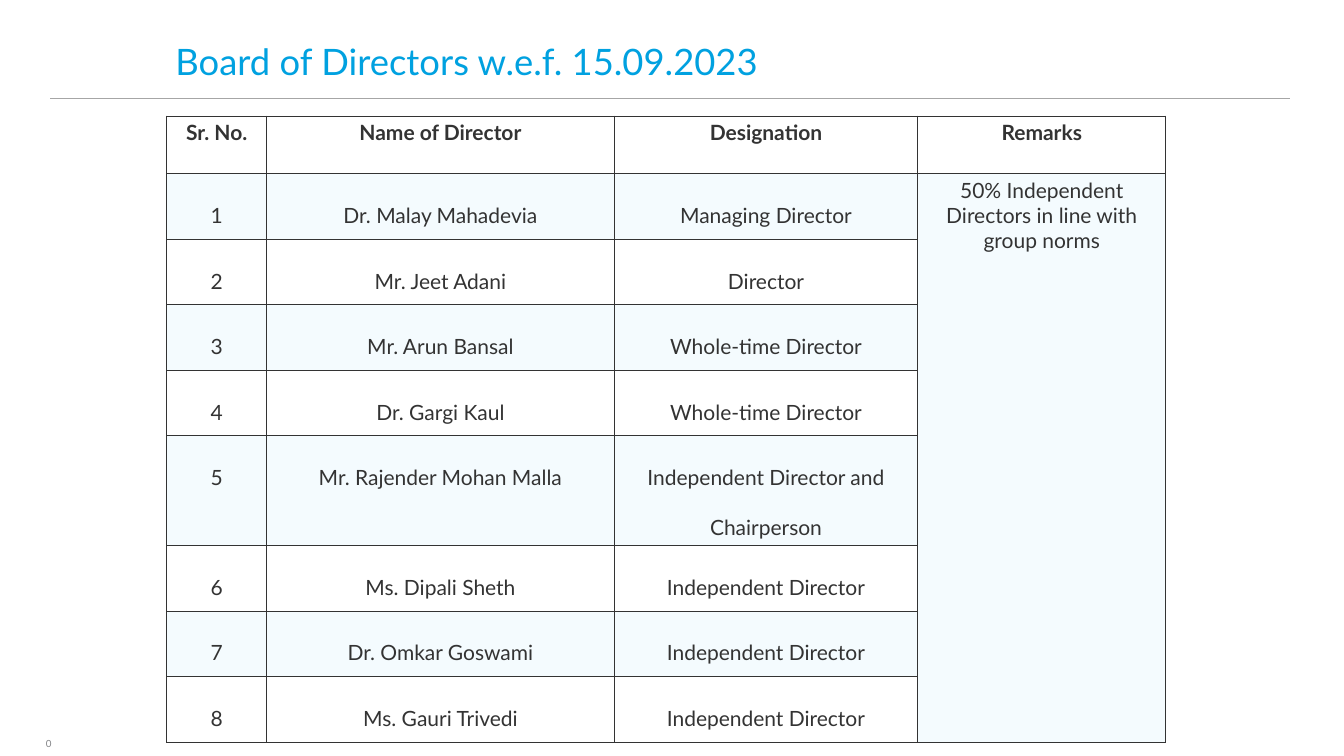
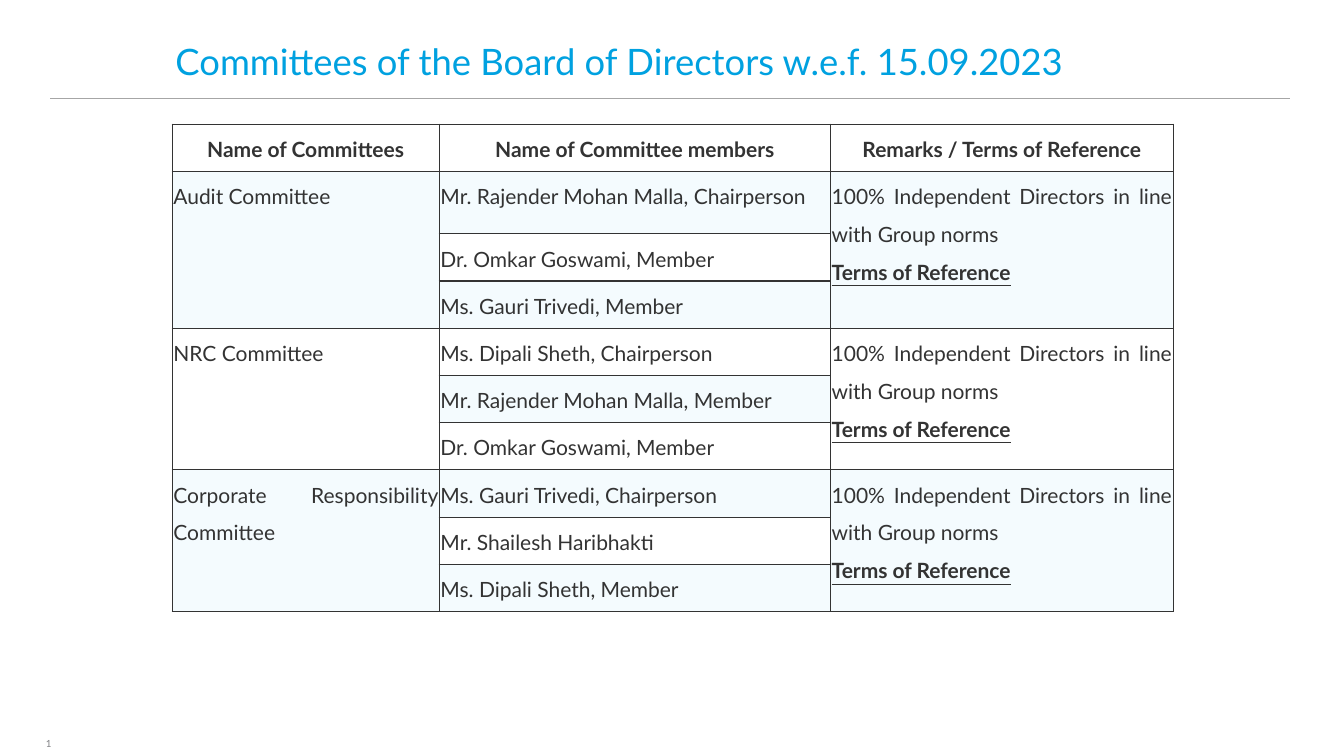
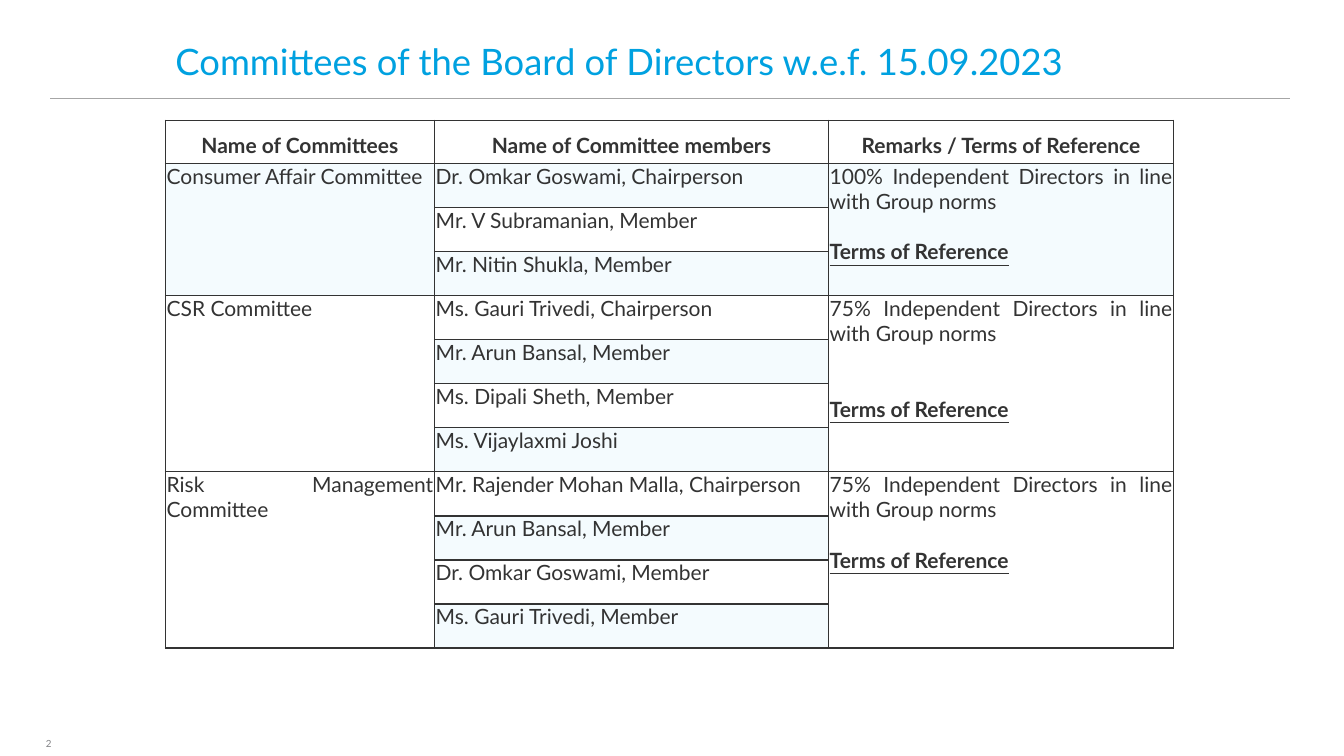
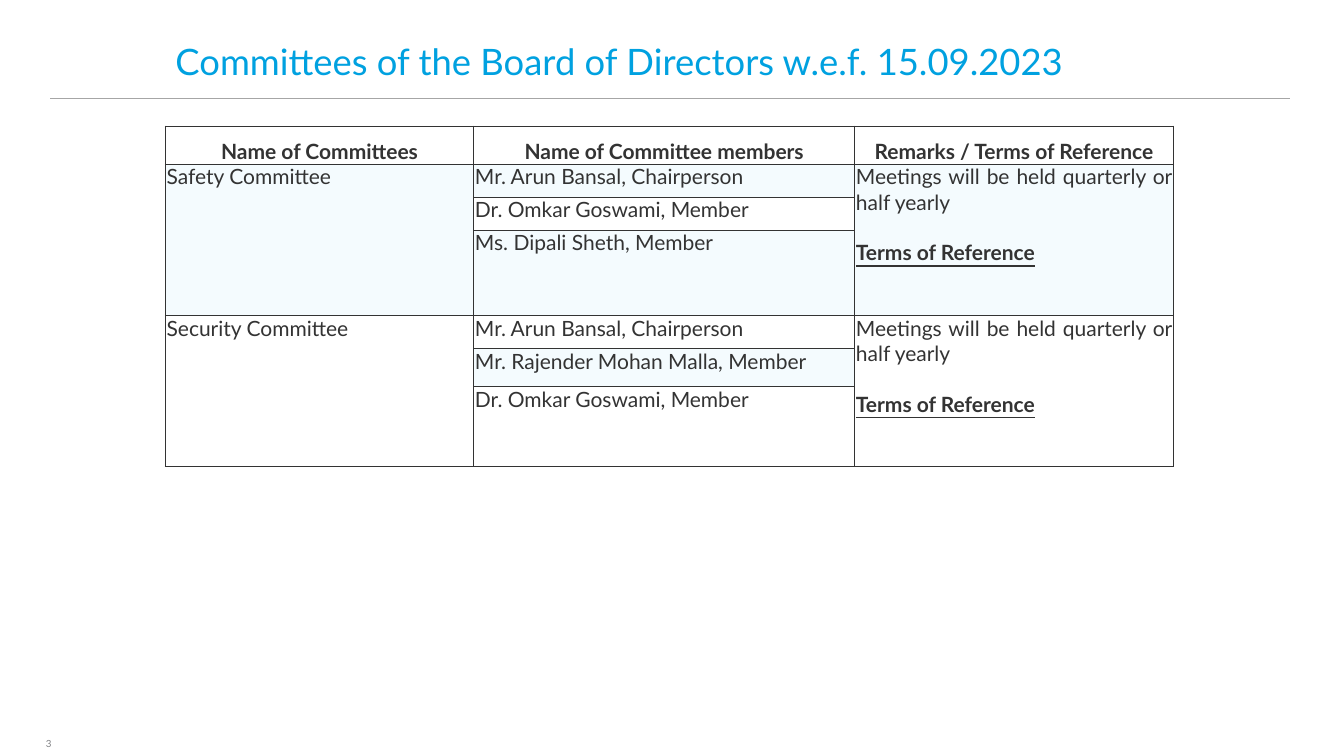
import pptx
import pptx.util
import pptx.dml.color
import pptx.enum.shapes
import pptx.enum.text
import pptx.oxml
import pptx.oxml.ns
from lxml import etree

Cm, Pt = pptx.util.Cm, pptx.util.Pt
RGBColor = pptx.dml.color.RGBColor
ALIGN = pptx.enum.text.PP_ALIGN
qn = pptx.oxml.ns.qn

# Shared look
FONT = "Lato"
TITLE_BLUE = RGBColor(0x00, 0xA1, 0xE0)
INK = RGBColor(0x33, 0x33, 0x33)
RULE_GREY = RGBColor(0xA6, 0xA6, 0xA6)
NUMBER_GREY = RGBColor(0x82, 0x83, 0x86)
WHITE = RGBColor(0xFF, 0xFF, 0xFF)
TINT = RGBColor(0xF4, 0xFB, 0xFE)
BODY_SIZE = 15
TEXT_LINE = 18  # height in points of one line of table text

# Content
DIRECTORS = [
    ("Dr. Malay Mahadevia", "Managing Director"),
    ("Mr. Jeet Adani", "Director"),
    ("Mr. Arun Bansal", "Whole-time Director"),
    ("Dr. Gargi Kaul", "Whole-time Director"),
    ("Mr. Rajender Mohan Malla", "Independent Director and Chairperson"),
    ("Ms. Dipali Sheth", "Independent Director"),
    ("Dr. Omkar Goswami", "Independent Director"),
    ("Ms. Gauri Trivedi", "Independent Director"),
]
COMMITTEE_TITLE = "Committees of the Board of Directors w.e.f. 15.09.2023"
COMMITTEE_HEADINGS = ["Name of Committees", "Name of Committee members",
                      "Remarks / Terms of Reference"]
ALL_INDEPENDENT = "100% Independent Directors in line with Group norms"
MOSTLY_INDEPENDENT = "75% Independent Directors in line with Group norms"
MEETINGS = "Meetings will be held quarterly or half yearly"

# Each committee: name, members, remark, lines left free below the remark
STATUTORY = [
    ("Audit Committee",
     ["Mr. Rajender Mohan Malla, Chairperson", "Dr. Omkar Goswami, Member",
      "Ms. Gauri Trivedi, Member"], ALL_INDEPENDENT, 0),
    ("NRC Committee",
     ["Ms. Dipali Sheth, Chairperson", "Mr. Rajender Mohan Malla, Member",
      "Dr. Omkar Goswami, Member"], ALL_INDEPENDENT, 0),
    ("Corporate Responsibility Committee",
     ["Ms. Gauri Trivedi, Chairperson", "Mr. Shailesh Haribhakti",
      "Ms. Dipali Sheth, Member"], ALL_INDEPENDENT, 0),
]
CONSUMER_AND_RISK = [
    ("Consumer Affair Committee",
     ["Dr. Omkar Goswami, Chairperson", "Mr. V Subramanian, Member",
      "Mr. Nitin Shukla, Member"], ALL_INDEPENDENT, 1),
    ("CSR Committee",
     ["Ms. Gauri Trivedi, Chairperson", "Mr. Arun Bansal, Member",
      "Ms. Dipali Sheth, Member", "Ms. Vijaylaxmi Joshi"],
     MOSTLY_INDEPENDENT, 2),
    ("Risk Management Committee",
     ["Mr. Rajender Mohan Malla, Chairperson", "Mr. Arun Bansal, Member",
      "Dr. Omkar Goswami, Member", "Ms. Gauri Trivedi, Member"],
     MOSTLY_INDEPENDENT, 1),
]
SAFETY_AND_SECURITY = [
    ("Safety Committee",
     ["Mr. Arun Bansal, Chairperson", "Dr. Omkar Goswami, Member",
      "Ms. Dipali Sheth, Member"], MEETINGS, 1),
    ("Security Committee",
     ["Mr. Arun Bansal, Chairperson", "Mr. Rajender Mohan Malla, Member",
      "Dr. Omkar Goswami, Member"], MEETINGS, 1),
]


def set_font(paragraph, size, color, bold=False):
    font = paragraph.font
    font.name, font.size, font.bold = FONT, Pt(size), bold
    font.color.rgb = color


def set_margins(frame, left, top, right, bottom):
    frame.margin_left, frame.margin_top = Cm(left), Cm(top)
    frame.margin_right, frame.margin_bottom = Cm(right), Cm(bottom)


def furnish_layout(layout, slide):
    """Draw the title rule and page number, then hand them to the layout."""
    for placeholder in list(layout.placeholders):
        if placeholder.placeholder_format.idx != 0:
            layout.shapes.element.remove(placeholder.element)

    rule = slide.shapes.add_connector(
        pptx.enum.shapes.MSO_CONNECTOR.STRAIGHT,
        Cm(1.27), Cm(2.47), Cm(32.51), Cm(2.47))
    rule.line.color.rgb = RULE_GREY
    rule.line.width = Pt(0.75)
    etree.SubElement(rule.element.spPr, qn("a:effectLst"))

    page_number = slide.shapes.add_textbox(Cm(0.36), Cm(18.49), Cm(1.73), Cm(0.51))
    frame = page_number.text_frame
    frame.word_wrap = False
    frame.vertical_anchor = pptx.enum.text.MSO_ANCHOR.MIDDLE
    set_margins(frame, 0.1, 0.1, 0.1, 0.1)
    paragraph = frame.paragraphs[0]
    paragraph.alignment = ALIGN.CENTER
    paragraph._p.append(pptx.oxml.parse_xml(
        '<a:fld xmlns:a="http://schemas.openxmlformats.org/drawingml/2006/main" '
        'id="{B6F15528-21DE-4FAA-801E-634DDDAF4B2B}" type="slidenum">'
        f'<a:rPr lang="en-US" sz="700"><a:solidFill><a:srgbClr val="{NUMBER_GREY}"/>'
        f'</a:solidFill><a:latin typeface="{FONT}"/></a:rPr><a:t>0</a:t></a:fld>'))

    for shape in (rule, page_number):
        layout.shapes.element.append(shape.element)


def add_titled_slide(prs, layout, text, width):
    slide = prs.slides.add_slide(layout)
    title = slide.shapes.title
    title.left, title.top = Cm(4.17), Cm(0.08)
    title.width, title.height = Cm(width), Cm(2.13)
    frame = title.text_frame
    frame.text = text
    frame.word_wrap = True
    frame.auto_size = pptx.enum.text.MSO_AUTO_SIZE.NONE
    frame.vertical_anchor = pptx.enum.text.MSO_ANCHOR.BOTTOM
    set_margins(frame, 0.25, 0.1, 0.1, 0.1)
    paragraph = frame.paragraphs[0]
    paragraph.alignment = ALIGN.LEFT
    paragraph.line_spacing = 0.9
    set_font(paragraph, 26, TITLE_BLUE)
    return slide


def add_grid(slide, left, top, widths, heights):
    """Add a bordered table whose odd rows are tinted."""
    frame = slide.shapes.add_table(len(heights), len(widths), Cm(left), Cm(top),
                                   Cm(sum(widths)), Cm(sum(heights)))
    grid = frame.table
    grid.first_row = grid.horz_banding = False
    for column, width in zip(grid.columns, widths):
        column.width = Cm(width)
    for index, (row, height) in enumerate(zip(grid.rows, heights)):
        row.height = Cm(height)
        for cell in row.cells:
            add_borders(cell)
            cell.fill.solid()
            cell.fill.fore_color.rgb = TINT if index % 2 else WHITE
    return grid


def add_borders(cell):
    properties = cell._tc.get_or_add_tcPr()
    for side in ("a:lnL", "a:lnR", "a:lnT", "a:lnB"):
        border = etree.SubElement(properties, qn(side), w=str(Pt(1)))
        fill = etree.SubElement(border, qn("a:solidFill"))
        etree.SubElement(fill, qn("a:srgbClr"), val=str(INK))


def write_cell(cell, text, margins, align, spacing=1.0, bold=False):
    set_margins(cell, *margins)
    cell.text = text
    paragraph = cell.text_frame.paragraphs[0]
    paragraph.alignment = align
    paragraph.line_spacing = spacing
    set_font(paragraph, BODY_SIZE, INK, bold)


def add_reference(cell, spacing, free_lines):
    paragraph = cell.text_frame.add_paragraph()
    paragraph.text = "Terms of Reference"
    paragraph.alignment = ALIGN.JUSTIFY
    paragraph.line_spacing = spacing
    paragraph.space_before = Pt(TEXT_LINE * free_lines)
    set_font(paragraph, BODY_SIZE, INK, True)
    paragraph.font.underline = True


def add_directors(slide):
    heights = [1.45] + [2.77 if "Chairperson" in role else 1.65
                        for _, role in DIRECTORS]
    grid = add_grid(slide, 4.2, 2.93, [2.52, 8.76, 7.65, 6.25], heights)
    headings = ["Sr. No.", "Name of Director", "Designation", "Remarks"]
    for column, heading in enumerate(headings):
        write_cell(grid.cell(0, column), heading, (0.2, 0.1, 0.2, 0.56),
                   ALIGN.CENTER, bold=True)
    margins = (0.2, 0.1, 0.2, 0.1)
    for number, (name, role) in enumerate(DIRECTORS, 1):
        for column, text in enumerate((str(number), name, role)):
            write_cell(grid.cell(number, column), text, margins, ALIGN.CENTER, 2.0)
    remark = grid.cell(1, 3)
    remark.merge(grid.cell(len(DIRECTORS), 3))
    write_cell(remark, "50% Independent Directors in line with group norms",
               margins, ALIGN.CENTER)


def add_committees(slide, committees, left, top, widths, heights, spacing=1.0):
    grid = add_grid(slide, left, top, widths, heights)
    margins = (0.03, 0, 0.03, 0)
    for column, heading in enumerate(COMMITTEE_HEADINGS):
        write_cell(grid.cell(0, column), heading, margins, ALIGN.CENTER, 1.5, True)
    first = 1
    for name, members, remark, free_lines in committees:
        last = first + len(members) - 1
        for column, text in ((0, name), (2, remark)):
            grid.cell(first, column).merge(grid.cell(last, column))
            write_cell(grid.cell(first, column), text, margins, ALIGN.JUSTIFY, spacing)
        add_reference(grid.cell(first, 2), spacing, free_lines)
        for row, member in enumerate(members, first):
            write_cell(grid.cell(row, 1), member, margins, ALIGN.JUSTIFY, spacing)
        first = last + 1


def main():
    prs = pptx.Presentation()
    prs.slide_width, prs.slide_height = Cm(33.87), Cm(19.05)
    prs.element.set("firstSlideNum", "0")
    layout = prs.slide_layouts[5]

    # Board
    board = add_titled_slide(prs, layout, "Board of Directors w.e.f. 15.09.2023", 18.75)
    furnish_layout(layout, board)
    add_directors(board)

    # Committees
    statutory = add_titled_slide(prs, layout, COMMITTEE_TITLE, 25.5)
    add_committees(statutory, STATUTORY, 4.34, 3.13, [6.73, 9.86, 8.64],
                   [1.19, 1.57] + [1.19] * 8, 1.5)

    consumer = add_titled_slide(prs, layout, COMMITTEE_TITLE, 25.4)
    add_committees(consumer, CONSUMER_AND_RISK, 4.17, 3.03, [6.78, 9.93, 8.7],
                   [1.09] + [1.11] * 11)

    safety = add_titled_slide(prs, layout, COMMITTEE_TITLE, 25.78)
    add_committees(safety, SAFETY_AND_SECURITY, 4.17, 3.18, [7.77, 9.6, 8.03],
                   [0.96, 0.83, 0.83, 2.16, 0.83, 0.95, 2.02])

    prs.save("out.pptx")


if __name__ == "__main__":
    main()
